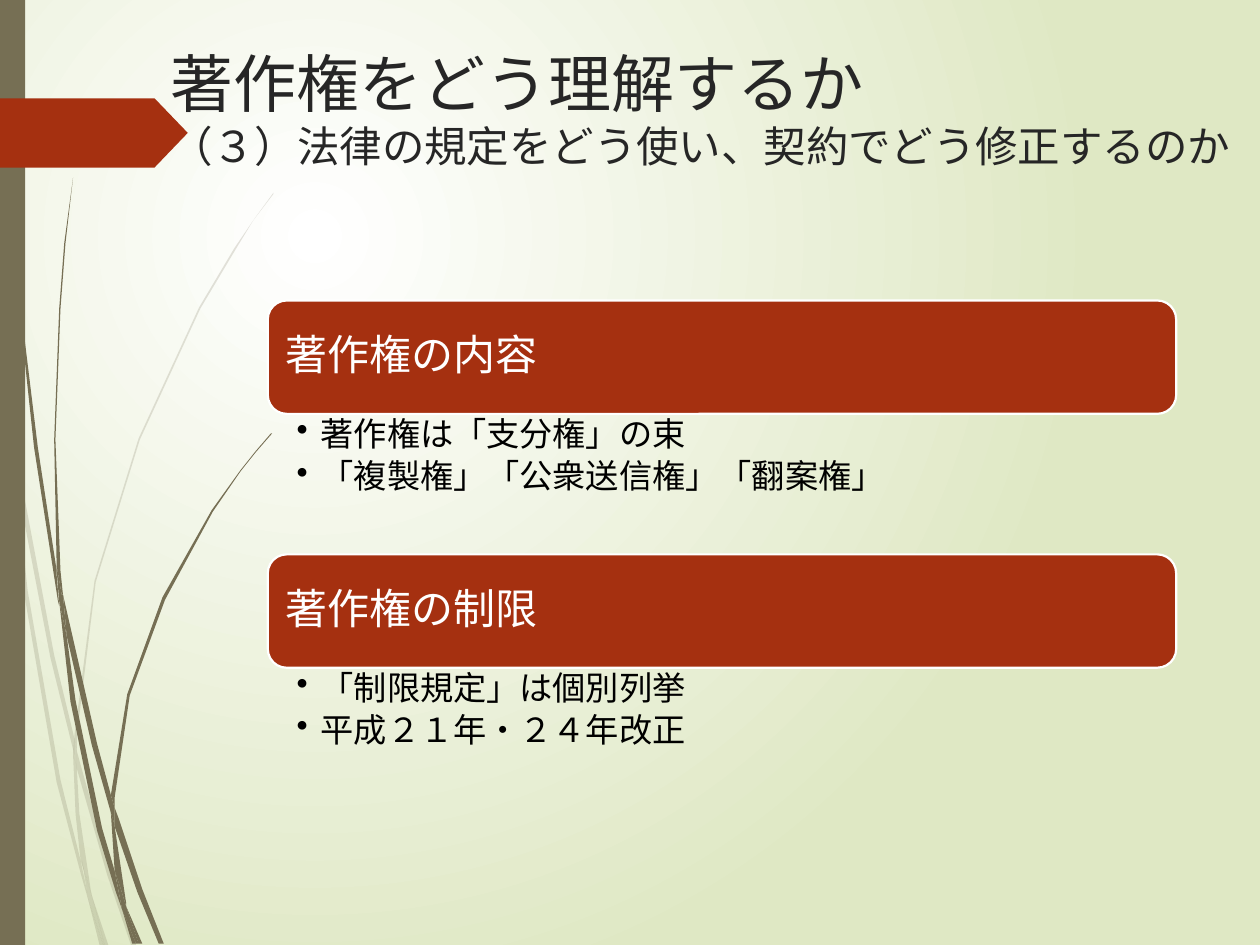
from lxml.etree import SubElement
from pptx import Presentation
from pptx.dml.color import RGBColor
from pptx.enum.shapes import MSO_SHAPE as Kind
from pptx.enum.text import MSO_ANCHOR as Anchor, MSO_AUTO_SIZE as Fit, PP_ALIGN as Align
from pptx.oxml.ns import qn
from pptx.util import Inches, Pt

COLS, ROWS = 100, 75
CELL = Inches(0.1)
INK = {"bark": "766F54", "rust": "A53010", "white": "FFFFFF",
       "leaf": "DFE8C4", "dark": "262626", "black": "000000"}

FAINT = [
    [(0.8, 35), (0.6, 32.2), (0, 28.2), (0, 29.9), (0.7, 34.4)],
    [(4, 52.2), (5.9, 59.9), (5.9, 58.6), (4.3, 52), (1, 34.5), (1.2, 37.6)],
    [(6.4, 60.7), (6.1, 59.6), (6.1, 61), (8.5, 69.4), (10.4, 75), (10.8, 75), (8.8, 69.2)],
    [(8.3, 75), (8.6, 75), (7.3, 71.1)],
    [(6.4, 68.3), (4.8, 61.9), (2.2, 46.9), (1.2, 37.6), (0.8, 35), (1.9, 47),
     (4.5, 62.1), (6.4, 69.3), (7, 71.4), (6.9, 70.7)],
    [(5.8, 59.9), (6, 64.6), (6.4, 68.3), (6.7, 69.2), (7.3, 71.1), (7.2, 70.6),
     (6.3, 64.6), (6.1, 61), (6.1, 60.8)],
    [(6.1, 58.4), (7.6, 46.2), (11.1, 34.9), (15.9, 24.5), (18.7, 19.8), (20.1, 17.5),
     (21.7, 15.4), (21.7, 15.3), (20.1, 17.5), (18.6, 19.7), (15.8, 24.4), (11, 34.8),
     (7.5, 46.1), (5.9, 58.4), (5.9, 58.6), (6.1, 59.6)],
    [(7, 71.4), (7.9, 75), (8.2, 75)],
    [(6.1, 60.8), (6.1, 61), (6.1, 59.6), (5.9, 58.6), (5.8, 59.9)],
    [(6.7, 69.2), (6.5, 68.3), (6.9, 70.7), (7, 71.4), (8.2, 75), (8.3, 75), (7.3, 71.1)],
]
BOLD = [
    [(0.5, 11), (1.4, 23.3), (2.7, 35.5), (4.6, 47.7), (4.7, 48.1), (4.5, 45.7),
     (4.5, 45.3), (3, 35.5), (1.5, 23.2), (0.6, 10.9), (0.4, 4.8), (0.3, 0),
     (0.2, 0), (0.3, 4.8)],
    [(7.3, 59.2), (8.8, 64.5), (8.8, 63.3), (8.8, 63.1), (7.7, 59), (5, 47.2), (5.3, 50.5)],
    [(9.4, 64.9), (9.1, 64.1), (9.1, 65.6), (10.9, 70.8), (12.6, 74.9), (13, 74.9),
     (11.3, 70.6)],
    [(9.1, 69.1), (8.1, 65.7), (6, 55.6), (5.3, 50.5), (4.7, 47.7), (5.6, 55.7),
     (7.7, 65.9), (9.2, 70.8), (9.7, 72.2), (9.6, 71.7)],
    [(5, 47.2), (4.8, 45.3), (4.4, 34.9), (4.8, 24.5), (5.2, 19.3), (5.8, 14.1),
     (5.1, 19.3), (4.7, 24.5), (4.3, 34.9), (4.5, 44.9), (4.9, 47.2)],
    [(11, 74.9), (11.3, 74.9), (10, 71.9)],
    [(4.7, 47.7), (5.3, 50.5), (5, 47.2), (4.9, 47.2), (4.5, 44.9), (4.5, 45.3)],
    [(9.1, 63.3), (10.3, 55.2), (13.1, 47.6), (16.9, 40.6), (19.1, 37.4), (20.3, 35.9),
     (21.6, 34.4), (21.5, 34.4), (20.3, 35.8), (19.1, 37.3), (16.8, 40.5), (12.9, 47.4),
     (10.1, 55.1), (8.8, 63.1), (9.1, 64.1)],
    [(9.7, 72.2), (10.5, 74.9), (10.8, 74.9)],
    [(8.8, 64.5), (9.1, 69.1), (9.6, 70.6), (10, 71.9), (10, 71.6), (9.1, 65.6), (9, 65.1)],
    [(8.8, 64.5), (9, 65.1), (9.1, 65.6), (9.1, 64.1), (8.8, 63.1), (8.8, 63.3)],
    [(9.6, 70.6), (9.1, 69.1), (9.6, 71.7), (9.7, 72.2), (10.8, 74.9), (11, 74.9),
     (10, 71.9)],
]
TOPICS = [
    ("著作権の内容", ["著作権は「支分権」の束", "「複製権」「公衆送信権」「翻案権」"]),
    ("著作権の制限", ["「制限規定」は個別列挙", "平成２１年・２４年改正"]),
]


def grid(*cells):
    return [round(c * CELL) for c in cells]


def write(para, text, size=19, ink="black", face="League Spartan"):
    run = para.add_run()
    run.text = text
    run.font.size = Pt(size)
    run.font.name = face
    run.font.color.rgb = RGBColor.from_string(INK[ink])
    SubElement(run.font._element, qn("a:ea"), {"typeface": face})


class Deck:
    def __init__(self):
        self.prs = Presentation()
        self.prs.slide_width, self.prs.slide_height = grid(COLS, ROWS)
        self.slide = self.prs.slides.add_slide(self.prs.slide_layouts[5])

    def back(self, inner, outer):
        fill = self.slide.background.fill
        fill.gradient()
        for stop, ink, place in zip(fill.gradient_stops, (inner, outer), (0, 1)):
            stop.color.rgb = RGBColor.from_string(INK[ink])
            stop.position = place
        line = next(self.slide.element.iter(qn("a:lin")))
        grad = line.getparent()
        grad.remove(line)
        ring = SubElement(grad, qn("a:path"), {"path": "circle"})
        SubElement(ring, qn("a:fillToRect"),
                   {"l": "50000", "t": "50000", "r": "100000", "b": "100000"})

    def paint(self, shape, ink, edge=None, alpha=None):
        shape.shadow.inherit = False
        shape.fill.solid()
        shape.fill.fore_color.rgb = RGBColor.from_string(INK[ink])
        if alpha:
            tone = next(shape.element.spPr.iter(qn("a:srgbClr")))
            SubElement(tone, qn("a:alpha"), {"val": str(alpha * 1000)})
        if edge:
            shape.line.color.rgb = RGBColor.from_string(INK[edge])
            shape.line.width = Pt(1.25)
        else:
            shape.line.fill.background()

    def shape(self, kind, box, ink, edge=None):
        shape = self.slide.shapes.add_shape(kind, *grid(*box))
        self.paint(shape, ink, edge)
        return shape

    def blade(self, pts, alpha=None):
        edge = [grid(*pt) for pt in pts]
        pen = self.slide.shapes.build_freeform(*edge[0])
        pen.add_line_segments(edge[1:], close=True)
        self.paint(pen.convert_to_shape(), "bark", alpha=alpha)

    def frame(self, shape, pads, anchor=Anchor.TOP):
        frame = shape.text_frame
        frame.word_wrap = True
        frame.auto_size = Fit.NONE
        frame.vertical_anchor = anchor
        (frame.margin_left, frame.margin_top,
         frame.margin_right, frame.margin_bottom) = grid(*pads)
        return frame

    def title(self, box, head, sub):
        title = self.slide.shapes.title
        title.left, title.top, title.width, title.height = grid(*box)
        para = self.frame(title, (1, 0.5, 1, 0.5)).paragraphs[0]
        para.alignment = Align.LEFT
        write(para, head, size=36, ink="dark")
        para.add_line_break()
        write(para, sub, size=24.3, ink="dark")

    def banner(self, box, text):
        bar = self.shape(Kind.ROUNDED_RECTANGLE, box, "rust", "white")
        para = self.frame(bar, (1, 1, 1, 1), Anchor.MIDDLE).paragraphs[0]
        para.alignment = Align.LEFT
        para.line_spacing = 0.9
        write(para, text, size=24, ink="white")

    def points(self, box, lines):
        text = self.slide.shapes.add_textbox(*grid(*box))
        frame = self.frame(text, (2.3, 0.3, 1.9, 0.3))
        for i, line in enumerate(lines):
            para = frame.add_paragraph() if i else frame.paragraphs[0]
            para.line_spacing = 0.9
            para.space_after = Pt(3.8)
            props = para._p.get_or_add_pPr()
            step = grid(1.9)[0]
            props.set("marL", str(step))
            props.set("indent", str(-step))
            SubElement(props, qn("a:buChar"), {"char": "•"})
            write(para, line)


def main():
    deck = Deck()
    deck.back("white", "leaf")
    for pts in FAINT:
        deck.blade(pts, alpha=20)
    for pts in BOLD:
        deck.blade(pts)
    deck.shape(Kind.RECTANGLE, (0, 0, 2, ROWS), "bark")
    arrow = deck.shape(Kind.PENTAGON, (0, 7.8, 14.9, 5.5), "rust")
    arrow.adjustments[0] = 0.48
    deck.title((12.5, 3, 87.5, 12.5), "著作権をどう理解するか",
               "（３）法律の規定をどう使い、契約でどう修正するのか")
    left, top, wide, bar, body = 21.25, 23.85, 72.1, 9, 11.15
    for i, (head, lines) in enumerate(TOPICS):
        y = top + i * (bar + body)
        deck.banner((left, y, wide, bar), head)
        deck.points((left, y + bar, wide, body), lines)
    deck.prs.save("out.pptx")


if __name__ == "__main__":
    main()
